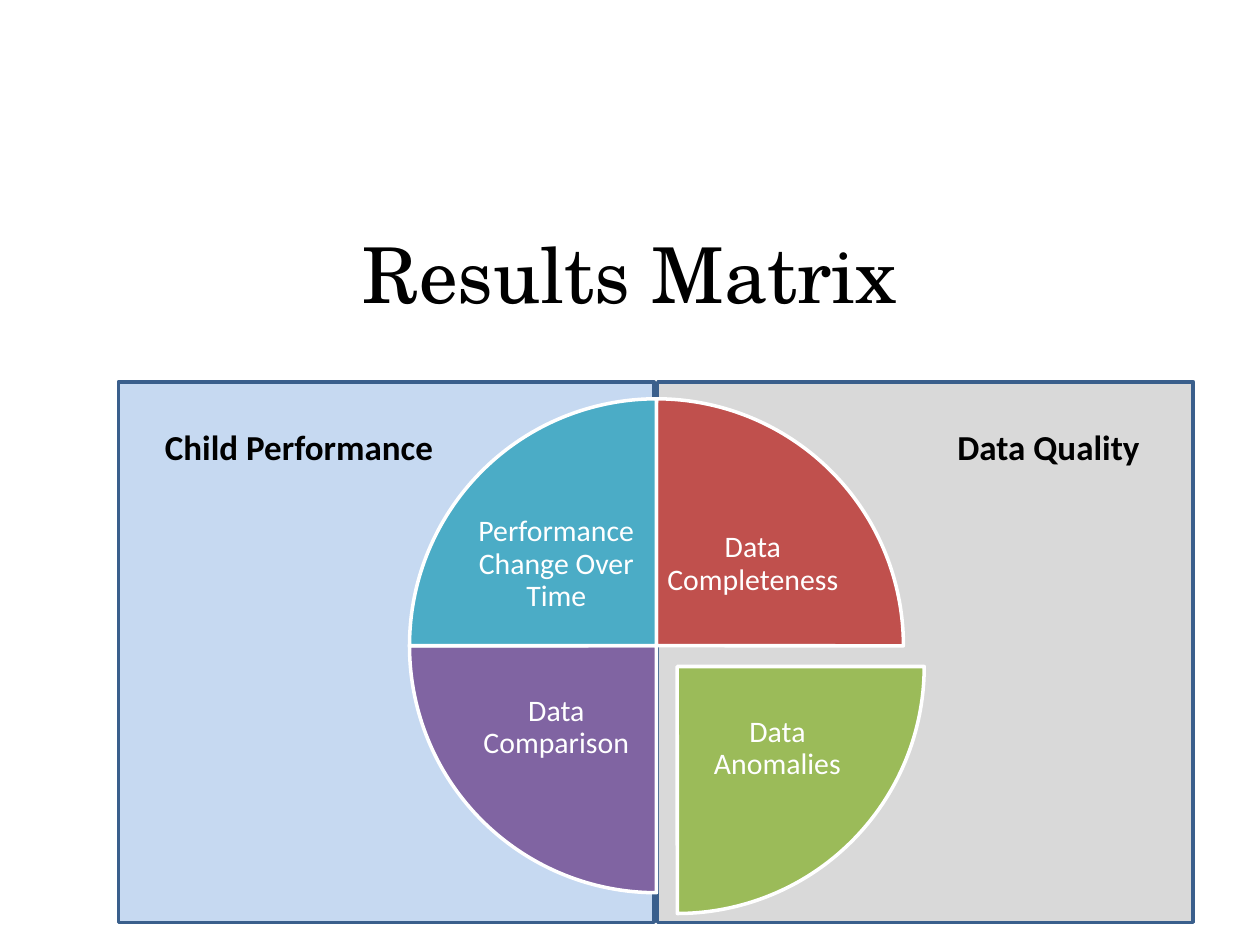
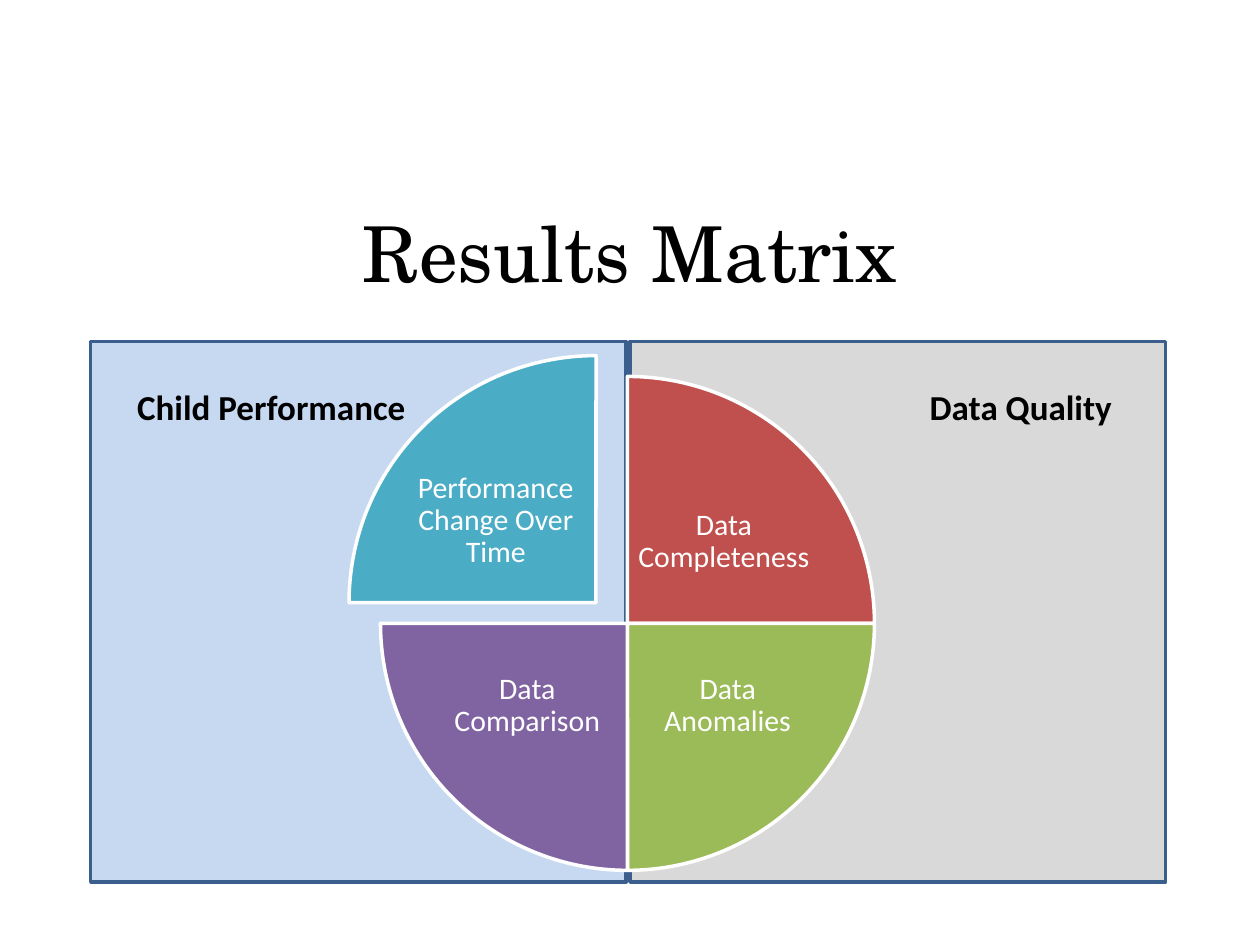
from pptx import Presentation
from pptx import util as u
from pptx.dml.color import RGBColor
from pptx.enum import shapes, text

WIDE, HIGH = u.Inches(10), u.Inches(7.5)
BODY, HEAD = "Calibri", "TeX Gyre Schola"
WHITE, BLACK, EDGE = "FFFFFF", "000000", "3A5F8C"

# Lengths are percent of the slide's width and height.
PANEL, STEP = (42.5, 57.2), 42.8
PIE = (39.2, 52.27)
TAG = (14.5, 15.6)
PANELS = ["C6D9F1", "D9D9D9"]
HEADS = [("Data Quality", 65.6, 16.6), ("Child Performance", 2.7, 23.5)]
# Wording, fill, and place of the wording within the pie, clockwise from the top.
PARTS = [
    ("Data Completeness", "C0504D", (20, 9.73)),
    ("Data Anomalies", "9BBB59", (20.3, 27.07)),
    ("Data Comparison", "8064A2", (4.4, 27.07)),
    ("Performance Change Over Time", "4BACC6", (4.4, 9.73)),
]


def tint(code):
    return RGBColor.from_string(code)


def place(spot, size):
    """Turn percent into left, top, width and height."""
    return [int(side * part / 100)
            for side, part in zip((WIDE, HIGH) * 2, (*spot, *size))]


def move(spot, step):
    return spot[0] + step[0], spot[1] + step[1]


def style(par, size, color, face=BODY, bold=False):
    font = par.runs[0].font
    font.name, font.size, font.bold = face, u.Pt(size), bold
    font.color.rgb = tint(color)


def draw(home, kind, spot, size, fill, line):
    shape = home.add_shape(kind, *place(spot, size))
    shape.shadow.inherit = False
    shape.fill.solid()
    shape.fill.fore_color.rgb = tint(fill)
    shape.line.color.rgb = tint(line)
    shape.line.width = u.Pt(2)
    return shape


def add_title(slide, top):
    title = slide.shapes.title
    title.left, title.top, title.width, title.height = place((5, top), (90, 16.67))
    frame = title.text_frame
    frame.text = "Results Matrix"
    frame.vertical_anchor = text.MSO_ANCHOR.TOP
    par = frame.paragraphs[0]
    par.alignment = text.PP_ALIGN.CENTER
    style(par, 44, BLACK, HEAD)


def add_panels(slide, spot):
    for col, fill in enumerate(PANELS):
        draw(slide.shapes, shapes.MSO_SHAPE.RECTANGLE,
             move(spot, (col * STEP, 0)), PANEL, fill, EDGE)
    for words, left, width in HEADS:
        box = slide.shapes.add_textbox(*place(move(spot, (left, 4)), (width, 5.87)))
        frame = box.text_frame
        frame.text = words
        frame.word_wrap = False
        frame.auto_size = text.MSO_AUTO_SIZE.SHAPE_TO_FIT_TEXT
        style(frame.paragraphs[0], 20, BLACK, bold=True)


def add_tag(home, spot, words):
    frame = home.add_textbox(*place(spot, TAG)).text_frame
    frame.text = words
    frame.word_wrap = True
    frame.vertical_anchor = text.MSO_ANCHOR.MIDDLE
    frame.margin_left = frame.margin_right = u.Inches(0.02)
    frame.margin_top = frame.margin_bottom = u.Inches(0.02)
    par = frame.paragraphs[0]
    par.alignment = text.PP_ALIGN.CENTER
    par.line_spacing = 0.9
    style(par, 17, WHITE)


def add_pie(slide, spot, pulled, pull):
    """Draw four quarters, with the pulled one moved out by pull."""
    home = slide.shapes.add_group_shape().shapes
    for turn, (words, fill, inset) in enumerate(PARTS):
        corner = move(spot, pull) if words == pulled else spot
        part = draw(home, shapes.MSO_SHAPE.PIE, corner, PIE, fill, WHITE)
        for end in range(2):
            part.adjustments[end] = 54 * ((turn + 3 + end) % 4)
        add_tag(home, move(corner, inset), words)


def add_matrix(deck, top, spot, inset, pulled, pull):
    slide = deck.slides.add_slide(deck.slide_layouts[5])
    add_title(slide, top)
    add_panels(slide, spot)
    add_pie(slide, move(spot, inset), pulled, pull)


def main():
    deck = Presentation()
    deck.slide_width, deck.slide_height = WIDE, HIGH
    add_matrix(deck, 23.33, (9.4, 40.4), (23.1, 1.8), "Data Anomalies", (1.65, 2.2))
    add_matrix(deck, 21.07, (7.2, 36.13), (23, 3.7),
               "Performance Change Over Time", (-2.5, -2.2))
    deck.save("out.pptx")


if __name__ == "__main__":
    main()
